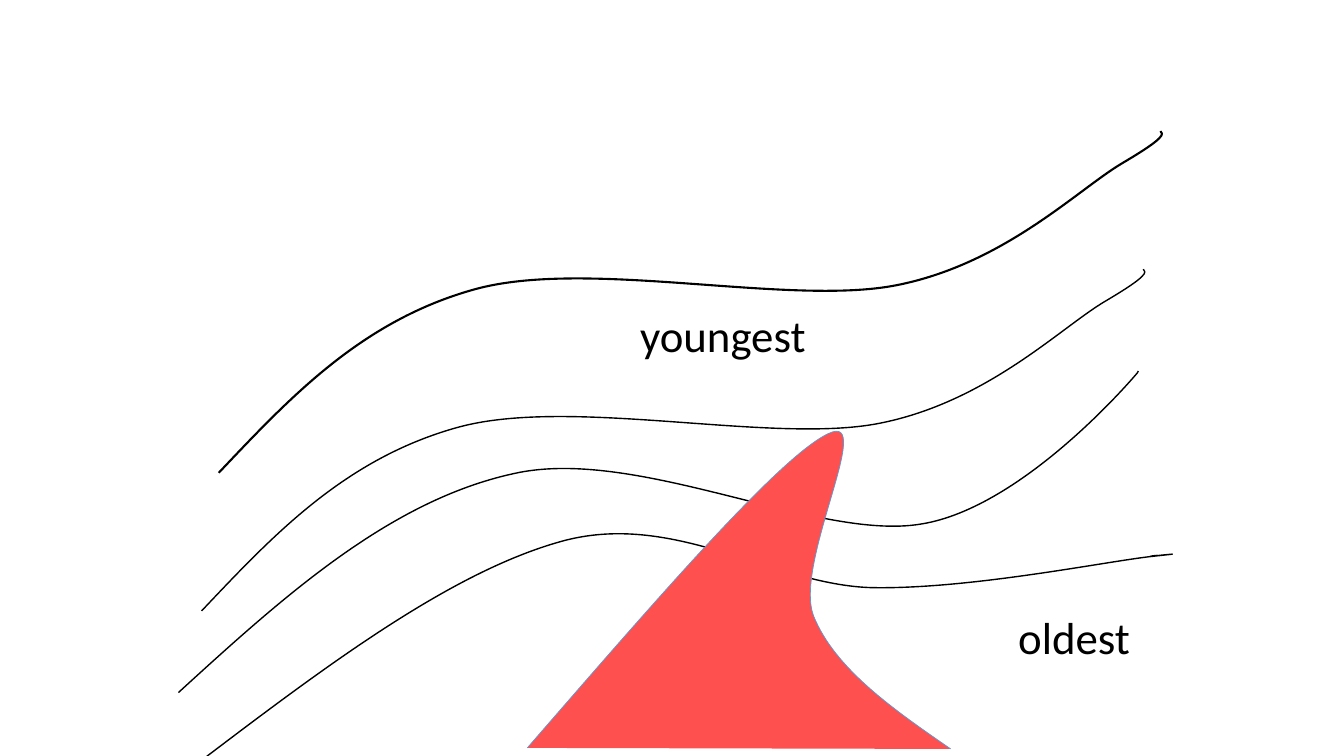
from lxml.etree import SubElement
from pptx import Presentation
from pptx.dml.color import RGBColor
from pptx.enum.text import MSO_AUTO_SIZE as AutoSize
from pptx.oxml.ns import qn
from pptx.util import Inches, Pt

BLACK = RGBColor(0x00, 0x00, 0x00)
RED = RGBColor(0xFF, 0x50, 0x50)
BLUE = RGBColor(0x5B, 0x9B, 0xD5)

# Each outline is a start point, then three points per Bézier segment.
SURFACE = [
    (2.17, 4.69),
    (2.88, 3.94), (3.59, 3.18), (4.71, 2.87),
    (5.83, 2.56), (7.82, 3.04), (8.89, 2.83),
    (9.96, 2.62), (10.69, 1.88), (11.13, 1.62),
    (11.57, 1.36), (11.54, 1.33), (11.51, 1.3),
]
UPPER_BED = [(x - 0.17, y + 1.37) for x, y in SURFACE]
MIDDLE_BED = [
    (1.77, 6.87),
    (2.81, 5.92), (3.86, 4.97), (5.09, 4.7),
    (6.31, 4.42), (8.1, 5.37), (9.13, 5.2),
    (10.16, 5.04), (11.28, 3.7), (11.28, 3.7),
    (11.28, 3.7), (11.29, 3.68), (11.29, 3.68),
]
LOWER_BED = [
    (2.03, 7.52),
    (3.27, 6.58), (4.51, 5.65), (5.61, 5.36),
    (6.71, 5.08), (7.67, 5.8), (8.64, 5.83),
    (9.61, 5.85), (10.97, 5.57), (11.43, 5.52),
    (11.9, 5.47), (11.4, 5.52), (11.41, 5.52),
    (11.41, 5.52), (11.45, 5.51), (11.48, 5.51),
]
INTRUSION = [
    (5.23, 7.42),
    (6.49, 5.97), (7.74, 4.52), (8.22, 4.3),
    (8.69, 4.08), (7.87, 5.59), (8.07, 6.11),
    (8.28, 6.63), (8.85, 7.03), (9.43, 7.43),
]


class StrataSlide:
    font_name = "Calibri"
    font_size = Pt(32)

    def __init__(self, deck):
        self.page = deck.slides.add_slide(deck.slide_layouts[6])

    def curve(self, points, line_color, line_width, fill=None):
        """Draw an open Bézier outline, optionally filled."""
        start, *rest = [(Inches(x), Inches(y)) for x, y in points]
        builder = self.page.shapes.build_freeform(*start)
        builder.add_line_segments(rest, close=False)
        shape = builder.convert_to_shape()
        self.bend(shape)
        shape.shadow.inherit = False
        shape.line.color.rgb = line_color
        shape.line.width = Pt(line_width)
        if fill is None:
            shape.fill.background()
        else:
            shape.fill.solid()
            shape.fill.fore_color.rgb = fill

    @staticmethod
    def bend(shape):
        """Turn every three straight segments into one cubic curve."""
        segments = list(shape.element.iter(qn("a:lnTo")))
        outline = segments[0].getparent()
        for first in range(0, len(segments), 3):
            cubic = SubElement(outline, qn("a:cubicBezTo"))
            for segment in segments[first:first + 3]:
                cubic.append(segment[0])
                outline.remove(segment)

    def label(self, text, left, top, width):
        box = self.page.shapes.add_textbox(
            Inches(left), Inches(top), Inches(width), Inches(0.64))
        frame = box.text_frame
        frame.word_wrap = True
        frame.auto_size = AutoSize.SHAPE_TO_FIT_TEXT
        frame.text = text
        font = frame.paragraphs[0].runs[0].font
        font.name = self.font_name
        font.size = self.font_size
        font.color.rgb = BLACK


def main():
    deck = Presentation()
    deck.slide_width, deck.slide_height = Inches(13.33), Inches(7.5)
    strata = StrataSlide(deck)
    strata.curve(SURFACE, BLACK, 1.5)
    for bed in (UPPER_BED, MIDDLE_BED, LOWER_BED):
        strata.curve(bed, BLACK, 1)
    strata.label("oldest", 10, 6, 1.5)
    strata.label("youngest", 6.25, 3, 3.75)
    strata.curve(INTRUSION, BLUE, 0.5, fill=RED)
    deck.save("out.pptx")


if __name__ == "__main__":
    main()
